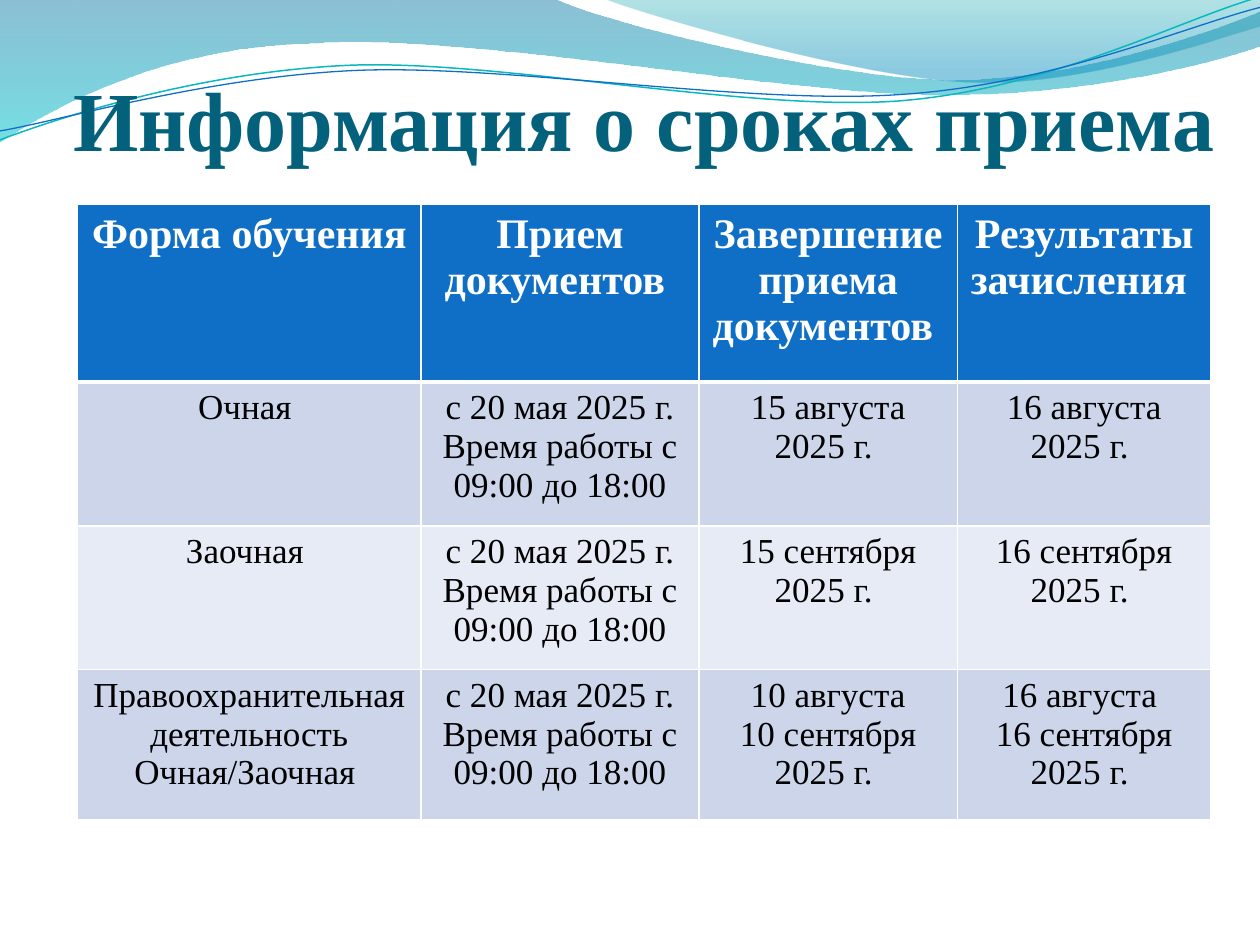
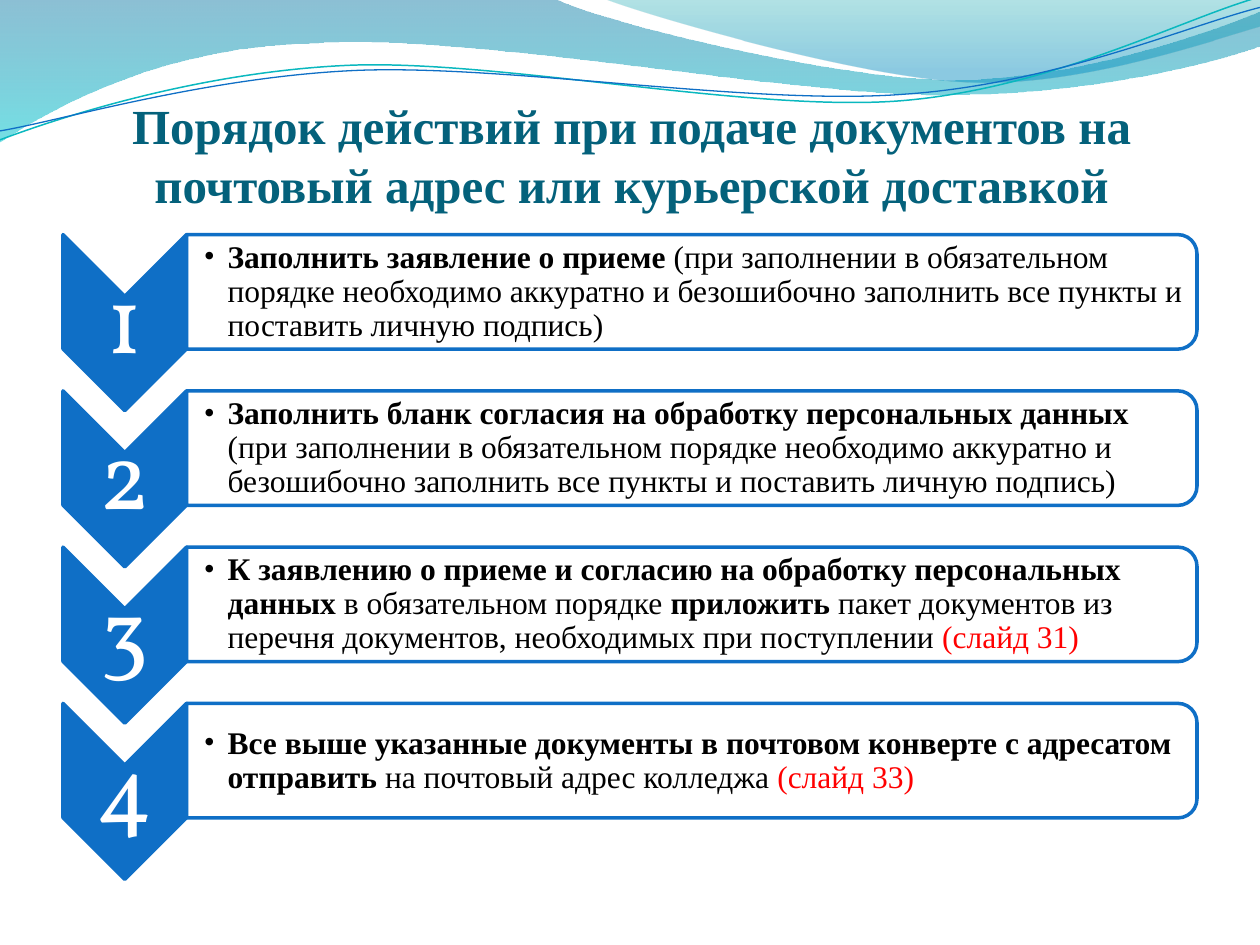
from pptx import Presentation
from pptx.dml.color import RGBColor
from pptx.enum.shapes import MSO_SHAPE
from pptx.enum.text import MSO_ANCHOR, MSO_AUTO_SIZE, PP_ALIGN
from pptx.oxml.ns import qn
from pptx.oxml.xmlchemy import OxmlElement
from pptx.util import Cm, Pt

CHEVRON = MSO_SHAPE.CHEVRON
PANEL = MSO_SHAPE.ROUND_2_SAME_RECTANGLE
MIDDLE, BOTTOM = MSO_ANCHOR.MIDDLE, MSO_ANCHOR.BOTTOM
FIXED = MSO_AUTO_SIZE.NONE
CENTER = PP_ALIGN.CENTER

SERIF, DIGIT = "Times New Roman", "Vollkorn"
BLUE, TEAL, NAVY = "0F6FC6", "0AB8BF", "04617B"
WHITE, BLACK, RED = "FFFFFF", "000000", "FF0000"
TINTS = ["CCD5EA", "E7EBF5"]

WAVE = [(0, 0), (11.18, -0.03),
        (12.09, 0.43, 16.87, 1.6, 19.25, 1.6),
        (21.67, 1.6, 24.33, 0.66, 25.4, 0.23), (25.43, 0.91),
        (24.97, 1.12, 22.1, 1.93, 18.95, 1.91),
        (15.8, 1.91, 9.7, 0.71, 6.53, 0.86),
        (3.28, 0.91, 1.17, 2.11, -0.03, 2.87)]
GLARE = [(12.17, -0.03), (12.93, 0.28, 17.32, 1.57, 19.53, 1.65),
         (21.74, 1.75, 24.41, 0.81, 25.4, 0.53), (25.4, 0)]
UPPER = [(-0.05, 2.22), (1.19, 1.82, 4.02, 1.04, 7.05, 1.05),
         (10.05, 1.07, 15.02, 2.37, 18.08, 2.29),
         (21.13, 2.2, 23.86, 0.91, 25.41, 0.55)]
LOWER = [(-0.04, 2.04), (1.16, 1.9, 4.17, 1.15, 7.2, 1.16),
         (10.25, 1.18, 15.13, 2.25, 18.19, 2.16),
         (21.22, 2.1, 23.93, 1.06, 25.45, 0.75)]

HOURS = "с 20 мая 2025 г.\nВремя работы с 09:00 до 18:00"
DATES = [
    ["Форма обучения ", "Прием документов ",
     "Завершение приема документов ", "Результаты зачисления "],
    ["Очная ", HOURS, "15 августа 2025 г. ", "16 августа 2025 г. "],
    ["Заочная ", HOURS, "15 сентября 2025 г. ", "16 сентября 2025 г. "],
    ["Правоохранительная деятельность\nОчная/Заочная ", HOURS,
     "10 августа\n10 сентября 2025 г. ",
     "16 августа \n16 сентября 2025 г. "],
]
CARE = ("(при заполнении в обязательном порядке необходимо аккуратно и "
        "безошибочно заполнить все пункты и поставить личную подпись)")
STEPS = [
    [("Заполнить заявление о приеме ", True), (CARE, False)],
    [("Заполнить бланк согласия на обработку персональных данных ", True),
     (CARE, False)],
    [("К заявлению о приеме и согласию на обработку персональных данных",
      True), (" в обязательном порядке ", False), ("приложить", True),
     (" пакет документов из перечня документов, необходимых при "
      "поступлении ", False), ("(слайд 31)", False, RED)],
    [("Все выше указанные документы в почтовом конверте с адресатом "
      "отправить", True), (" на почтовый адрес колледжа ", False),
     ("(слайд 33)", False, RED)],
]


def rgb(code):
    """Turn a hex string into a colour."""
    return RGBColor.from_string(code)


def cms(*sizes):
    """Turn numbers into lengths."""
    return [Cm(size) for size in sizes]


def write(par, text, size, hue, bold=False, face=SERIF):
    """Add one run to a paragraph."""
    run = par.add_run()
    run.text = text
    font = run.font
    font.name, font.size, font.bold = face, Pt(size), bold
    font.color.rgb = rgb(hue)


def set_frame(frame, anchor, pads):
    """Set the wrap, anchor and insets of a text frame."""
    frame.word_wrap = True
    frame.auto_size = FIXED
    frame.vertical_anchor = anchor
    (frame.margin_left, frame.margin_top,
     frame.margin_right, frame.margin_bottom) = cms(*pads)


def fade(shape, levels):
    """Give the fill colours of a shape their opacity in percent."""
    for node, level in zip(shape.element.iter(qn("a:srgbClr")), levels):
        alpha = OxmlElement("a:alpha")
        alpha.set("val", str(level * 1000))
        node.append(alpha)


def bend(shape, path):
    """Join each three line points of a curved part into one curve."""
    lines = iter(list(shape.element.iter(qn("a:lnTo"))))
    for part in path[1:]:
        group = [next(lines) for _ in range(len(part) // 2)]
        if len(group) == 3:
            curve = OxmlElement("a:cubicBezTo")
            group[0].addprevious(curve)
            for line in group:
                curve.append(line[0])
                line.getparent().remove(line)


def outline(shapes, path, close):
    """Draw a freeform along a path of lines and curves."""
    first, *rest = [cms(*part[spot:spot + 2]) for part in path
                    for spot in range(0, len(part), 2)]
    pen = shapes.build_freeform(*first, scale=1.0)
    pen.add_line_segments(rest, close=close)
    shape = pen.convert_to_shape()
    bend(shape, path)
    shape.shadow.inherit = False
    return shape


def add_wave(shapes, path, stops):
    """Draw a clear gradient wave from (place, colour, opacity) stops."""
    wave = outline(shapes, path, False)
    for track in wave.element.iter(qn("a:path")):
        track.append(OxmlElement("a:close"))
    wave.line.fill.background()
    wave.fill.gradient()
    wave.fill.gradient_angle = 270
    for stop, (place, hue, _) in zip(wave.fill.gradient_stops, stops):
        stop.position = place
        stop.color.rgb = rgb(hue)
    fade(wave, [stop[2] for stop in stops])
    return wave


def add_curve(shapes, path, hue, width):
    """Draw a thin open curve with a slight tilt."""
    curve = outline(shapes, path, False)
    curve.rotation = 357.3
    curve.fill.background()
    curve.line.color.rgb = rgb(hue)
    curve.line.width = Pt(width)
    return curve


def add_band(slide):
    """Draw the top band and move it to the layout all slides share."""
    shapes = slide.shapes
    parts = [
        add_wave(shapes, WAVE, [(0, "0074A1", 45), (1, "00C6CF", 55)]),
        add_wave(shapes, GLARE, [(0, "00A1A9", 30), (0.8, "008BBF", 45)]),
        add_curve(shapes, UPPER, TEAL, 0.85),
        add_curve(shapes, LOWER, BLUE, 0.75),
    ]
    tree = slide.slide_layout.placeholders[0].element.getparent()
    for spot, part in enumerate(parts, 2):
        part.element.nvSpPr.cNvPr.set("id", str(spot + 20))
        tree.insert(spot, part.element)


def add_title(slide, text, size, box):
    """Place and format the title."""
    title = slide.shapes.title
    title.left, title.top, title.width, title.height = cms(*box)
    set_frame(title.text_frame, BOTTOM, (0, 0.13, 0, 0))
    par = title.text_frame.paragraphs[0]
    par.alignment = CENTER
    write(par, text, size, NAVY, True)


def add_edge(cell, side, width):
    """Draw one white border of a cell."""
    edge = OxmlElement("a:ln" + side)
    edge.set("w", str(Pt(width)))
    fill = OxmlElement("a:solidFill")
    hue = OxmlElement("a:srgbClr")
    hue.set("val", WHITE)
    fill.append(hue)
    edge.append(fill)
    cell._tc.get_or_add_tcPr().append(edge)


def fill_cell(cell, text, row):
    """Format one cell by its row and write its lines."""
    head = row == 0
    add_edge(cell, "L", 1)
    add_edge(cell, "R", 1)
    add_edge(cell, "T", 3 if row == 1 else 1)
    add_edge(cell, "B", 3 if head else 1)
    cell.fill.solid()
    cell.fill.fore_color.rgb = rgb(BLUE if head else TINTS[(row - 1) % 2])
    frame = cell.text_frame
    for spot, line in enumerate(text.split("\n")):
        par = frame.add_paragraph() if spot else frame.paragraphs[0]
        par.alignment = CENTER
        if head:
            write(par, line, 24, WHITE, True)
        else:
            write(par, line, 20, BLACK)


def add_dates(slide, left, top):
    """Build the table of admission dates."""
    wide, high = cms(6.93, 5.6, 5.21, 5.11), cms(3.58, 2.9, 2.9, 3.02)
    table = slide.shapes.add_table(
        len(high), len(wide), Cm(left), Cm(top), sum(wide), sum(high)).table
    for col, width in zip(table.columns, wide):
        col.width = width
    for row, height in enumerate(high):
        table.rows[row].height = height
        for col, text in enumerate(DATES[row]):
            fill_cell(table.cell(row, col), text, row)


def add_turned(slide, kind, box, hue):
    """Add a shape turned by 90 degrees that covers the given box."""
    left, top, width, height = box
    shape = slide.shapes.add_shape(kind, *cms(
        left + (width - height) / 2, top + (height - width) / 2,
        height, width))
    shape.rotation = 90
    shape.shadow.inherit = False
    shape.fill.solid()
    shape.fill.fore_color.rgb = rgb(hue)
    shape.line.color.rgb = rgb(BLUE)
    shape.line.width = Pt(2)
    return shape


def add_label(slide, box, pads):
    """Add a text box and return its first paragraph."""
    frame = slide.shapes.add_textbox(*cms(*box)).text_frame
    set_frame(frame, MIDDLE, pads)
    return frame.paragraphs[0]


def add_bullet(par):
    """Give a paragraph a hanging bullet."""
    props = par._p.get_or_add_pPr()
    props.set("marL", str(Cm(0.48)))
    props.set("indent", str(-Cm(0.48)))
    for tag, name, value in (("a:buFont", "typeface", SERIF),
                             ("a:buChar", "char", "•")):
        mark = OxmlElement(tag)
        mark.set(name, value)
        props.append(mark)


def add_step(slide, number, runs, left, top):
    """Build one numbered chevron with its text panel."""
    wide, tall, panel = 2.49, 3.55, 2.31
    add_turned(slide, CHEVRON, (left, top, wide, tall), BLUE)
    par = add_label(slide, (left, top + wide / 2, wide, tall - wide),
                    [0.1] * 4)
    par.alignment = CENTER
    par.line_spacing = 0.9
    write(par, str(number), 54, WHITE, face=DIGIT)

    side = left + wide
    shape = add_turned(slide, PANEL, (side, top, 20.37, panel), WHITE)
    fade(shape, [90])
    par = add_label(slide, (side, top + 0.12, 20.27, panel - 0.23),
                    (0.35, 0.03, 0.03, 0.03))
    add_bullet(par)
    par.line_spacing = 0.9
    for text, bold, *hue in runs:
        write(par, text, 18, hue[0] if hue else BLACK, bold)


def add_steps(slide, left, top, pitch=3.15):
    """Stack the steps at an equal pitch."""
    for spot, runs in enumerate(STEPS):
        add_step(slide, spot + 1, runs, left, top + spot * pitch)


def main():
    """Build both slides and save them."""
    deck = Presentation()
    deck.slide_width, deck.slide_height = cms(25.4, 19.05)
    layout = deck.slide_layouts[5]

    slide = deck.slides.add_slide(layout)
    add_band(slide)
    add_title(slide, "Информация о сроках приема ", 48,
              (1.27, 0.02, 23.42, 3.38))
    add_dates(slide, 1.56, 4.12)

    slide = deck.slides.add_slide(layout)
    add_title(slide, "Порядок действий при подаче документов на почтовый "
              "адрес или курьерской доставкой", 28, (1.3, 1.12, 22.86, 3.18))
    add_steps(slide, 1.27, 4.73)
    deck.save("out.pptx")


if __name__ == "__main__":
    main()
